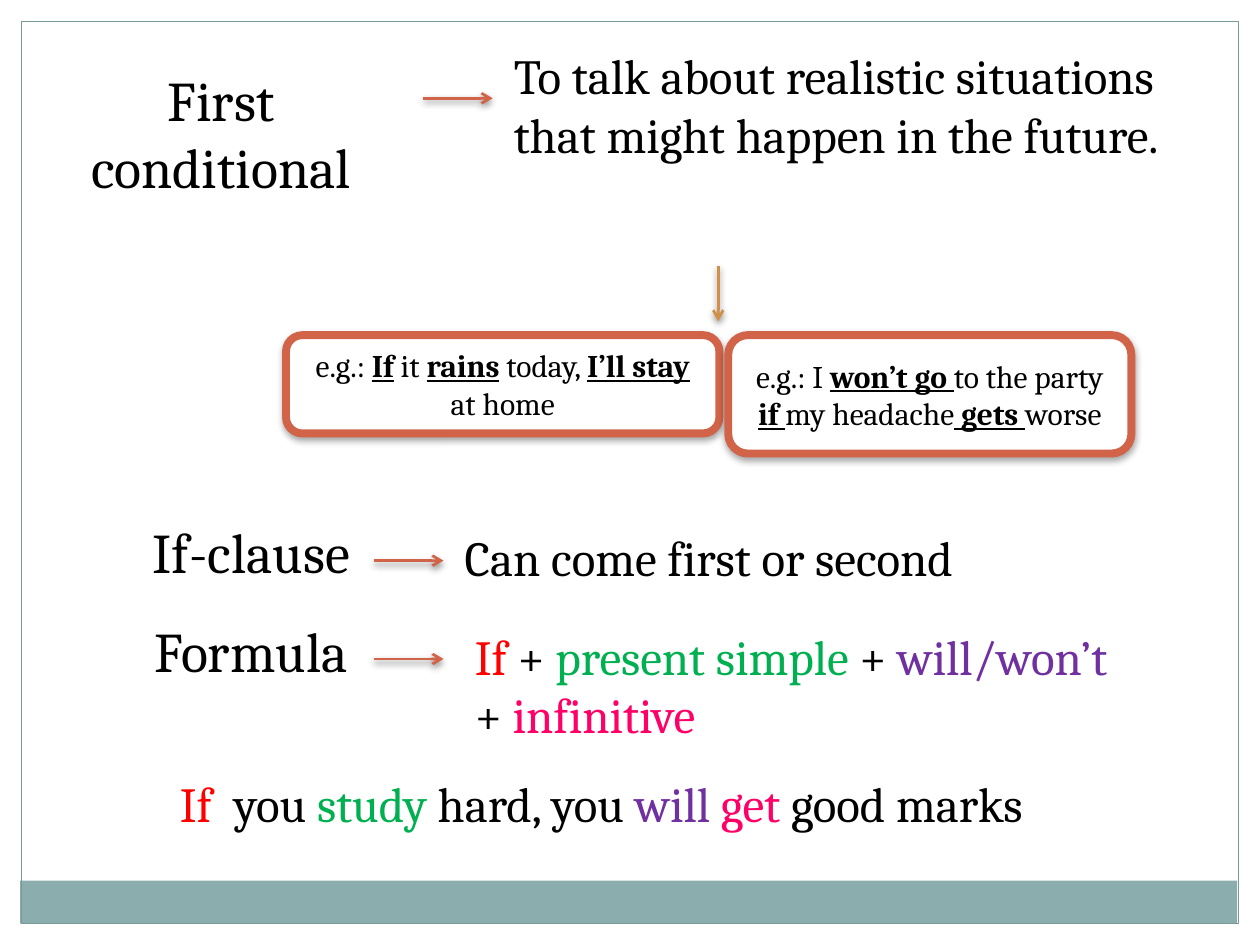
from lxml.etree import SubElement
from pptx import Presentation
from pptx.dml.color import RGBColor
from pptx.enum.shapes import MSO_CONNECTOR, MSO_SHAPE
from pptx.enum.text import MSO_ANCHOR, MSO_AUTO_SIZE, PP_ALIGN
from pptx.oxml.ns import qn
from pptx.util import Pt

FONT = "Cambria"
BLACK, WHITE = "000000", "FFFFFF"
RED, GREEN, PURPLE, PINK = "FF0000", "00B050", "7030A0", "FF0066"
RUST, OCHRE = "D16349", "D19049"
BAND, FRAME = "8CADAE", "7C999A"
LABEL_SIZE, TEXT_SIZE, EXAMPLE_SIZE = 32, 28, 18
LABEL_WIDTH, TEXT_WIDTH, ARROW_LENGTH = 219.6, 393.84, 39.6


def colour(value):
    return RGBColor.from_string(value)


def add_shadow(shape, opacity):
    """Add a soft shadow below; call it after fill and line are set."""
    effects = SubElement(shape._element.spPr, qn("a:effectLst"))
    shadow = SubElement(effects, qn("a:outerShdw"), blurRad=str(Pt(4)),
                        dist=str(Pt(2)), dir="5400000", rotWithShape="0")
    shade = SubElement(shadow, qn("a:srgbClr"), val=BLACK)
    SubElement(shade, qn("a:alpha"), val=str(opacity * 1000))


def write_spans(shape, spans, size, align=PP_ALIGN.LEFT):
    """Write (text, colour, emphasised) spans as one paragraph."""
    shape.text_frame.word_wrap = True
    para = shape.text_frame.paragraphs[0]
    para.alignment = align
    para.font.name = FONT
    para.font.size = Pt(size)
    for text, ink, emphasised in spans:
        span = para.add_run()
        span.text = text
        span.font.color.rgb = colour(ink)
        if emphasised:
            span.font.bold = span.font.underline = True


def coloured(*spans):
    return [(text, ink, False) for text, ink in spans]


def alternating(*texts):
    """Emphasise every second text."""
    return [(text, BLACK, index % 2 == 1) for index, text in enumerate(texts)]


def add_text(page, left, top, width, height, spans, size, align=PP_ALIGN.LEFT):
    box = page.shapes.add_textbox(Pt(left), Pt(top), Pt(width), Pt(height))
    write_spans(box, spans, size, align)
    box.text_frame.auto_size = MSO_AUTO_SIZE.SHAPE_TO_FIT_TEXT


def add_label(page, top, text):
    add_text(page, 33.84, top, LABEL_WIDTH, 46.08,
             coloured((text, BLACK)), LABEL_SIZE, PP_ALIGN.CENTER)


def add_arrow(page, left, top, across, down, ink):
    arrow = page.shapes.add_connector(
        MSO_CONNECTOR.STRAIGHT,
        Pt(left), Pt(top), Pt(left + across), Pt(top + down))
    arrow.line.color.rgb = colour(ink)
    arrow.line.width = Pt(1.57)
    outline = arrow._element.spPr.find(qn("a:ln"))
    SubElement(outline, qn("a:tailEnd"), type="arrow")
    add_shadow(arrow, 45)


def add_example(page, left, width, height, spans):
    box = page.shapes.add_shape(MSO_SHAPE.ROUNDED_RECTANGLE,
                                Pt(left), Pt(191.52), Pt(width), Pt(height))
    box.fill.solid()
    box.fill.fore_color.rgb = colour(WHITE)
    box.line.color.rgb = colour(RUST)
    box.line.width = Pt(4.5)
    add_shadow(box, 35)
    box.text_frame.vertical_anchor = MSO_ANCHOR.MIDDLE
    write_spans(box, spans, EXAMPLE_SIZE, PP_ALIGN.CENTER)


def add_border(page):
    band = page.shapes.add_shape(MSO_SHAPE.RECTANGLE,
                                 Pt(11.52), Pt(503.28), Pt(695.52), Pt(24.48))
    band.fill.solid()
    band.fill.fore_color.rgb = colour(BAND)
    band.line.fill.background()
    frame = page.shapes.add_shape(MSO_SHAPE.RECTANGLE,
                                  Pt(12.24), Pt(12.24), Pt(695.52), Pt(515.52))
    frame.fill.background()
    frame.line.color.rgb = colour(FRAME)
    frame.line.width = Pt(0.75)
    for shape in (band, frame):
        shape.shadow.inherit = False


def set_title(page, text):
    title = page.shapes.title
    title.left, title.top = Pt(16.56), Pt(33.84)
    title.width, title.height = Pt(LABEL_WIDTH), Pt(84.96)
    title.text_frame.vertical_anchor = MSO_ANCHOR.TOP
    title.text_frame.auto_size = MSO_AUTO_SIZE.NONE
    write_spans(title, coloured((text, BLACK)), LABEL_SIZE, PP_ALIGN.CENTER)


def main():
    deck = Presentation()
    deck.slide_width, deck.slide_height = Pt(720), Pt(540)
    page = deck.slides.add_slide(deck.slide_layouts[5])
    add_border(page)

    set_title(page, "First conditional")
    add_arrow(page, 241.92, 56.16, ARROW_LENGTH, 0, RUST)
    use = "To talk about realistic situations that might happen in the future."
    add_text(page, 286.56, 22.32, TEXT_WIDTH, 108.72,
             coloured((use, BLACK)), TEXT_SIZE)

    add_arrow(page, 410.4, 151.92, 0, 31.68, OCHRE)
    add_example(page, 163.44, 247.68, 56.16, alternating(
        "e.g.: ", "If", " it ", "rains", " today, ", "I’ll stay ", "at home"))
    add_example(page, 416.16, 230.4, 67.68, alternating(
        "e.g.: I ", "won’t go ", "to the party", " if ",
        "my headache", " gets ", "worse"))

    position = coloured(("Can come first or second", BLACK))
    formula = coloured(
        ("If", RED), (" + ", BLACK), ("present simple ", GREEN), ("+ ", BLACK),
        ("will/won’t", PURPLE), (" + ", BLACK), ("infinitive", PINK))
    rows = [("If-clause", 258.48, 41.04, position),
            ("Formula", 264.24, 74.88, formula)]
    for index, (label, left, height, spans) in enumerate(rows):
        top = 292.32 + index * 56.16
        add_label(page, top, label)
        add_arrow(page, 213.84, top + 28.08, ARROW_LENGTH, 0, RUST)
        add_text(page, left, top + 5.76, TEXT_WIDTH, height, spans, TEXT_SIZE)

    add_text(page, 95.76, 438.48, 556.56, 41.04, coloured(
        ("If  ", RED), ("you ", BLACK), ("study ", GREEN),
        ("hard, you ", BLACK), ("will ", PURPLE), ("get ", PINK),
        ("good marks", BLACK)), TEXT_SIZE)

    deck.save("out.pptx")


if __name__ == "__main__":
    main()
